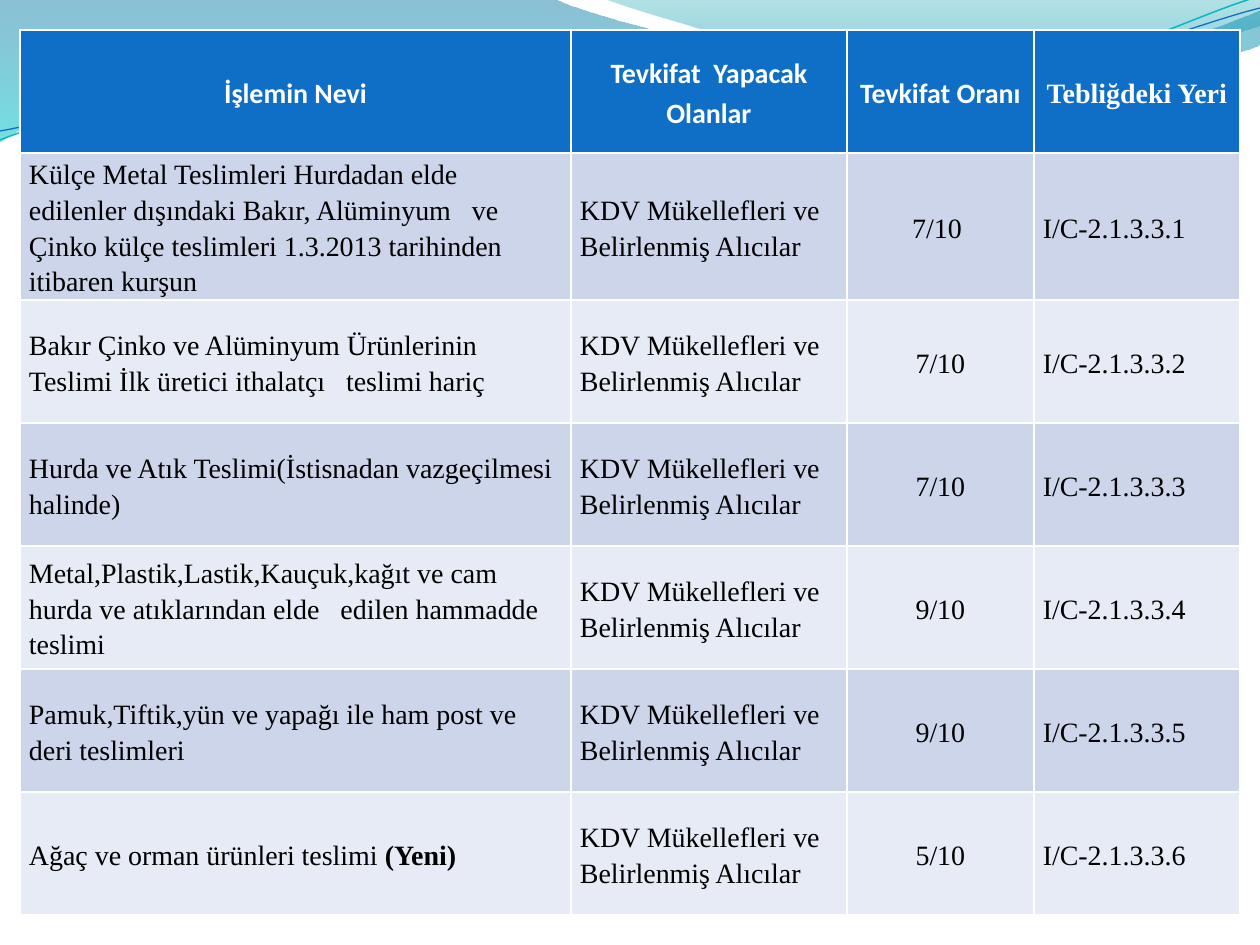
import math

import pptx
import pptx.dml.color
import pptx.enum.text
import pptx.oxml
import pptx.oxml.ns
import pptx.util

RGB = pptx.dml.color.RGBColor
WHITE = RGB(0xFF, 0xFF, 0xFF)
BLACK = RGB(0x00, 0x00, 0x00)
BLUE = RGB(0x0F, 0x6F, 0xC6)
TURQUOISE = RGB(0x0A, 0xB8, 0xBF)
BAND_DARK = RGB(0xCC, 0xD5, 0xEA)
BAND_LIGHT = RGB(0xE7, 0xEB, 0xF5)
OCEAN = RGB(0x00, 0x74, 0xA1)
CYAN = RGB(0x00, 0xC6, 0xCF)
TEAL = RGB(0x00, 0xA1, 0xA9)
SKY = RGB(0x00, 0x8B, 0xBF)

SERIF = "Times New Roman"
SANS = "Calibri"
CENTER = pptx.enum.text.PP_ALIGN.CENTER
LEFT = pptx.enum.text.PP_ALIGN.LEFT
NAMESPACE = pptx.oxml.ns.nsdecls("a")

# Outlines in px: one point is a straight step, three points a Bézier curve.
UPPER_LEFT_SWOOP = [
    [(0, 0)], [(554, -1)],
    [(600, 21), (837, 79), (955, 79)], [(1075, 79), (1207, 33), (1260, 11)],
    [(1261, 45)],
    [(1239, 55), (1096, 96), (940, 95)], [(784, 95), (481, 35), (324, 43)],
    [(163, 45), (58, 105), (-1, 142)], [(0, 0)],
]
UPPER_RIGHT_SWOOP = [
    [(604, -1)],
    [(641, 14), (859, 78), (969, 82)], [(1079, 87), (1211, 40), (1260, 26)],
    [(1260, 0)], [(604, -1)],
]
TURQUOISE_WAVE = [
    [(0, 140)], [(60, 117), (199, 72), (349, 66)],
    [(498, 59), (747, 112), (898, 101)], [(1050, 91), (1182, 19), (1257, -3)],
]
BLUE_WAVE = [
    [(0, 131)], [(59, 121), (207, 77), (357, 71)],
    [(508, 64), (747, 106), (903, 95)], [(1053, 84), (1187, 26), (1260, 8)],
]
WAVE_CENTER = (629, 73)
WAVE_TILT = -2.7

COLUMN_WIDTHS = [551, 276, 187, 206]
HEADER_HEIGHT, FIRST_ROW_HEIGHT, ROW_HEIGHT = 123, 147, 123
HEADERS = [
    ("İşlemin Nevi", SANS),
    ("Tevkifat  Yapacak Olanlar", SANS),
    ("Tevkifat Oranı", SANS),
    ("Tebliğdeki Yeri", SERIF),
]
BUYERS = "KDV Mükellefleri ve Belirlenmiş Alıcılar"
# Plain wording, bold ending, withholding rate
TRANSACTIONS = [
    ("Külçe Metal Teslimleri Hurdadan elde edilenler dışındaki Bakır, "
     "Alüminyum   ve Çinko külçe teslimleri 1.3.2013 tarihinden itibaren kurşun",
     "", "7/10 "),
    ("Bakır Çinko ve Alüminyum Ürünlerinin Teslimi İlk üretici ithalatçı "
     "  teslimi hariç", "", "7/10"),
    ("Hurda ve Atık Teslimi(İstisnadan vazgeçilmesi halinde)", "", "7/10"),
    ("Metal,Plastik,Lastik,Kauçuk,kağıt ve cam hurda ve atıklarından elde "
     "  edilen hammadde teslimi", "", "9/10"),
    ("Pamuk,Tiftik,yün ve yapağı ile ham post ve deri teslimleri", "", "9/10"),
    ("Ağaç ve orman ürünleri teslimi ", "(Yeni)", "5/10"),
]


def turn(point, center, degrees):
    """Rotate a point clockwise about a center."""
    angle = math.radians(degrees)
    across, down = point[0] - center[0], point[1] - center[1]
    return (center[0] + across * math.cos(angle) - down * math.sin(angle),
            center[1] + across * math.sin(angle) + down * math.cos(angle))


class SlideBuilder:
    """Holds the text style and the slide being filled."""

    text_size = pptx.util.Pt(16)
    line_spacing = 1.15
    side_margin = 9

    def __init__(self, deck):
        self.slide = deck.slides.add_slide(deck.slide_layouts[6])

    @staticmethod
    def emu(px):
        return pptx.util.Emu(round(px * 914400 / 126))

    def freeform(self, outline, closed):
        """Lay all points as straight steps, then merge each triple into a curve."""
        points = [(self.emu(x), self.emu(y)) for part in outline for x, y in part]
        builder = self.slide.shapes.build_freeform(*points[0])
        builder.add_line_segments(points[1:], close=closed)
        shape = builder.convert_to_shape()
        shape.shadow.inherit = False
        steps = iter(list(shape._element.iter(pptx.oxml.ns.qn("a:lnTo"))))
        for part in outline[1:]:
            group = [next(steps) for _ in part]
            if len(part) == 3:
                curve = pptx.oxml.parse_xml(f"<a:cubicBezTo {NAMESPACE}/>")
                group[0].addprevious(curve)
                for step in group:
                    curve.append(step[0])
                    step.getparent().remove(step)
        return shape

    def swoop(self, outline, stops):
        """Add a borderless area; stops are (position, colour, opacity percent)."""
        shape = self.freeform(outline, closed=True)
        shape.line.fill.background()
        shape.fill.gradient()
        shape.fill.gradient_angle = 270
        for stop, (position, color, _) in zip(shape.fill.gradient_stops, stops):
            stop.position = position
            stop.color.rgb = color
        colors = shape._element.spPr.iter(pptx.oxml.ns.qn("a:srgbClr"))
        for element, (_, _, opacity) in zip(list(colors), stops):
            element.append(pptx.oxml.parse_xml(
                f'<a:alpha {NAMESPACE} val="{opacity * 1000}"/>'))

    def wave(self, outline, color, width):
        """Add an open curve, drawn level and then tilted into place."""
        level = [[turn(point, WAVE_CENTER, -WAVE_TILT) for point in part]
                 for part in outline]
        shape = self.freeform(level, closed=False)
        shape.rotation = WAVE_TILT
        shape.fill.background()
        shape.line.color.rgb = color
        shape.line.width = pptx.util.Pt(width)

    def table(self, left, top, widths, heights):
        frame = self.slide.shapes.add_table(
            len(heights), len(widths), self.emu(left), self.emu(top),
            self.emu(sum(widths)), self.emu(sum(heights)))
        table = frame.table
        for column, width in zip(table.columns, widths):
            column.width = self.emu(width)
        for row, height in zip(table.rows, heights):
            row.height = self.emu(height)
        return table

    def cell(self, cell, runs, fill, color, align=LEFT, font=SERIF):
        """Fill a cell; runs are (text, bold) pairs. The table style rules the edges."""
        cell.fill.solid()
        cell.fill.fore_color.rgb = fill
        cell.vertical_anchor = pptx.enum.text.MSO_ANCHOR.MIDDLE
        cell.margin_left = cell.margin_right = self.emu(self.side_margin)
        cell.margin_top = cell.margin_bottom = 0
        para = cell.text_frame.paragraphs[0]
        para.alignment = align
        para.line_spacing = self.line_spacing
        for text, bold in runs:
            span = para.add_run()
            span.text = text
            span.font.name = font
            span.font.size = self.text_size
            span.font.bold = bold
            span.font.color.rgb = color


def main():
    deck = pptx.Presentation()
    deck.slide_width = pptx.util.Inches(10)
    deck.slide_height = pptx.util.Inches(7.5)
    page = SlideBuilder(deck)

    page.swoop(UPPER_LEFT_SWOOP, [(0, OCEAN, 45), (1, CYAN, 55)])
    page.swoop(UPPER_RIGHT_SWOOP, [(0, TEAL, 30), (0.8, SKY, 45)])
    page.wave(TURQUOISE_WAVE, TURQUOISE, 0.85)
    page.wave(BLUE_WAVE, BLUE, 0.75)

    heights = [HEADER_HEIGHT, FIRST_ROW_HEIGHT] + [ROW_HEIGHT] * (len(TRANSACTIONS) - 1)
    table = page.table(20, 30, COLUMN_WIDTHS, heights)
    for column, (text, font) in enumerate(HEADERS):
        page.cell(table.cell(0, column), [(text, True)], BLUE, WHITE, CENTER, font)
    for row, (wording, ending, rate) in enumerate(TRANSACTIONS, start=1):
        fill = BAND_DARK if row % 2 else BAND_LIGHT
        name = [(wording, False)] + ([(ending, True)] if ending else [])
        contents = [name, [(BUYERS, False)], [(rate, False)], [(f"I/C-2.1.3.3.{row}", False)]]
        for column, runs in enumerate(contents):
            align = CENTER if column == 2 else LEFT
            page.cell(table.cell(row, column), runs, fill, BLACK, align)

    deck.save("out.pptx")


if __name__ == "__main__":
    main()
